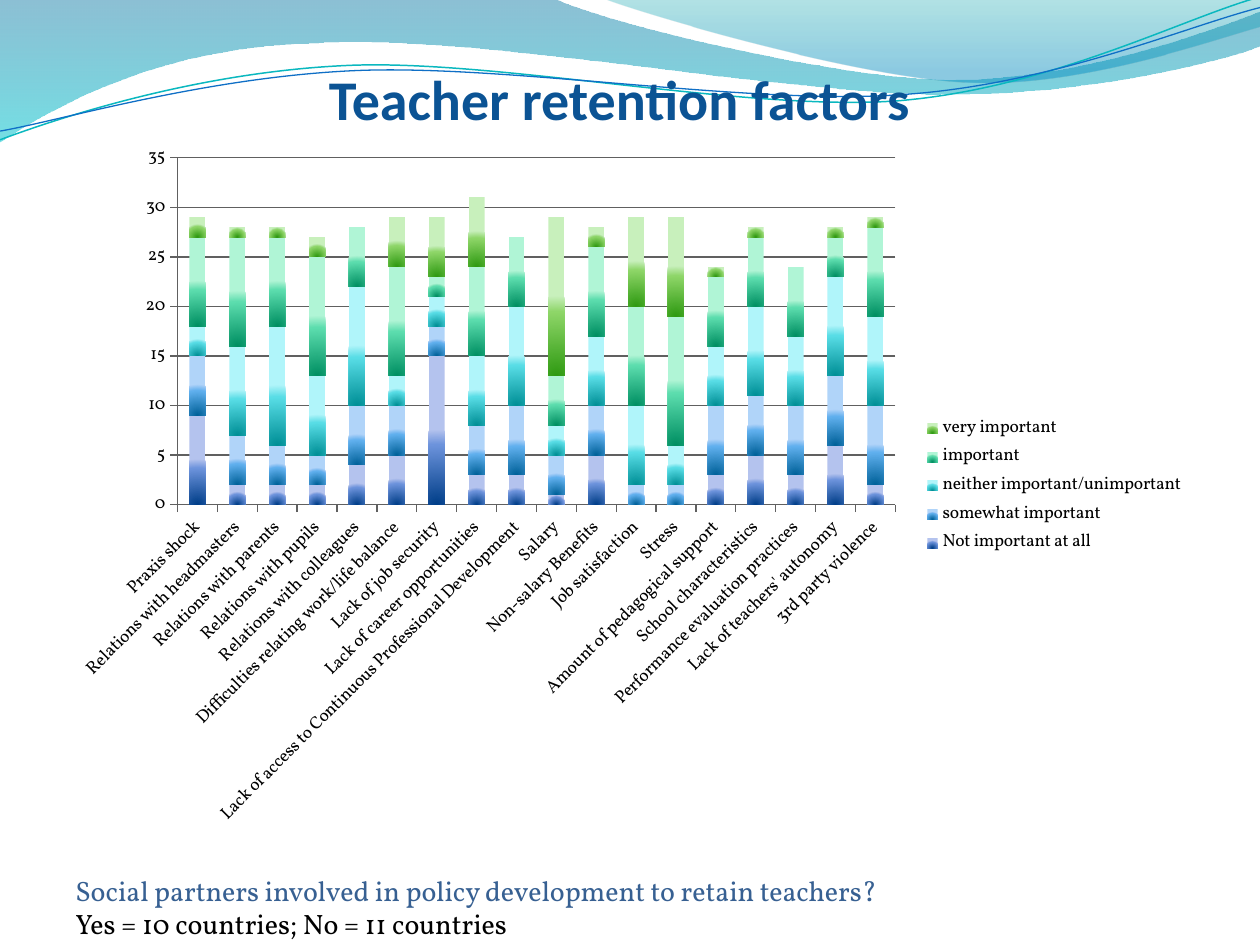
from lxml import etree
from pptx import Presentation
from pptx.chart.data import CategoryChartData
from pptx.dml.color import RGBColor
from pptx.enum.chart import XL_CHART_TYPE, XL_LEGEND_POSITION, XL_TICK_MARK
from pptx.enum.text import MSO_ANCHOR
from pptx.oxml import parse_xml
from pptx.oxml.ns import nsdecls, qn
from pptx.util import Pt

COLORS = {
    "title": "0B5394", "question": "376092", "text": "000000", "grid": "606060",
    "teal line": "0AB8BF", "blue line": "0F6FC6",
}
DOWN = '<a:lin ang="5400000" scaled="0"/>'
FROM_BOTTOM = '<a:path path="circle"><a:fillToRect l="50000" t="100000" r="50000" b="0"/></a:path>'


def add_text(slide, box, lines, size, font, bold=False,
             anchor=MSO_ANCHOR.TOP, insets=(7.2, 3.6, 7.2, 3.6)):
    tf = slide.shapes.add_textbox(*[Pt(v) for v in box]).text_frame
    tf.word_wrap = True
    tf.vertical_anchor = anchor
    tf.margin_left, tf.margin_top, tf.margin_right, tf.margin_bottom = [Pt(v) for v in insets]
    for i, (text, color) in enumerate(lines):
        p = tf.paragraphs[0] if i == 0 else tf.add_paragraph()
        r = p.add_run()
        r.text = text
        r.font.size, r.font.name, r.font.bold = Pt(size), font, bold
        r.font.color.rgb = RGBColor.from_string(COLORS[color])


def set_gradient(item, fill, stops, direction):
    """Fill with stops of (position %, colour, opacity %)."""
    fill.background()
    gs = "".join(
        f'<a:gs pos="{pos * 1000}"><a:srgbClr val="{color}">'
        f'<a:alpha val="{alpha * 1000}"/></a:srgbClr></a:gs>'
        for pos, color, alpha in stops)
    grad = parse_xml(f'<a:gradFill {nsdecls("a")} rotWithShape="1"><a:gsLst>{gs}</a:gsLst>'
                     f'{direction}</a:gradFill>')
    no_fill = item._element.find(".//" + qn("a:noFill"))
    no_fill.getparent().replace(no_fill, grad)


prs = Presentation()
prs.slide_width, prs.slide_height = Pt(720), Pt(540)
s = prs.slides.add_slide(prs.slide_layouts[6])

# Waves at the top: 2 numbers are a straight segment, 6 are a Bezier curve
waves = [
    ([(0, 0), (316.8, -0.7), (342.7, 12.2, 478.1, 45.4, 545.8, 45.4),
      (614.2, 45.4, 689.8, 18.7, 720, 6.5), (720.7, 25.9),
      (709.2, 31.7, 626.4, 54.7, 537.1, 54), (447.8, 54, 275, 20.2, 185, 24.5),
      (92.2, 25.9, 33.1, 59.8, -0.7, 81.4), (0, 0)],
     [(0, "0074A1", 45), (100, "00C6CF", 55)], None, 0),
    ([(344.9, -0.7), (366.5, 7.9, 491, 44.6, 553.7, 46.8),
      (616.3, 49.7, 691.9, 23, 720, 15.1), (720, 0), (344.9, -0.7)],
     [(0, "00A1A9", 30), (80, "008BBF", 45)], None, 0),
    ([(0, 79.9), (34.6, 67, 113.8, 41, 199.4, 37.4),
      (284.4, 33.8, 427, 64.1, 513.4, 57.6), (599.8, 50.4, 675.4, 10.8, 718.6, -1.4)],
     None, "teal line", 0.85),
    ([(0, 74.9), (33.8, 69.1, 118.1, 43.9, 203.8, 40.3),
      (290.2, 36.7, 429.8, 60.5, 516.2, 54), (601.9, 48.2, 677.5, 15.1, 720, 4.3)],
     None, "blue line", 0.75),
]
for segments, stops, line, width in waves:
    points = [(Pt(x), Pt(y)) for seg in segments for x, y in zip(seg[::2], seg[1::2])]
    builder = s.shapes.build_freeform(*points[0])
    builder.add_line_segments(points[1:], close=stops is not None)
    sp = builder.convert_to_shape()
    sp.shadow.inherit = False
    # Join the three points of each curve into one Bezier segment
    straight = iter(sp._element.findall(".//" + qn("a:lnTo")))
    for seg in segments[1:]:
        first = next(straight)
        if len(seg) == 6:
            first.tag = qn("a:cubicBezTo")
            for _ in range(2):
                other = next(straight)
                first.append(other[0])
                other.getparent().remove(other)
    if stops:
        set_gradient(sp, sp.fill, stops, DOWN)
        sp.line.fill.background()
    else:
        sp.fill.background()
        sp.line.color.rgb = RGBColor.from_string(COLORS[line])
        sp.line.width = Pt(width)

# Title
add_text(s, (36, 21.6, 648, 54), [("Teacher retention factors", "title")], 32, "Calibri",
         bold=True, anchor=MSO_ANCHOR.BOTTOM, insets=(152, 3.6, 0, 0.5))

# Chart data: name, values, (dark, middle, pale) of the bar gradient
series = [
    ("Not important at all", (9, 2, 2, 2, 4, 5, 15, 3, 3, 1, 5, 0, 0, 3, 5, 3, 6, 2),
     ("003E88", "6C93DC", "B4C3EE")),
    ("somewhat important", (6, 5, 4, 3, 6, 5, 3, 5, 7, 4, 5, 2, 2, 7, 6, 7, 7, 8),
     ("006199", "60B0EE", "B0D4F9")),
    ("neither important/unimportant", (3, 9, 12, 8, 12, 3, 3, 7, 10, 3, 7, 8, 4, 6, 9, 7, 10, 9),
     ("008F96", "58DDE6", "B0F5FA")),
    ("important", (9, 11, 9, 12, 6, 11, 2, 9, 7, 5, 9, 10, 13, 7, 7, 7, 4, 9),
     ("008F62", "5CDDAE", "B0F5D6")),
    ("very important", (2, 1, 1, 2, 0, 5, 6, 7, 0, 16, 2, 9, 10, 1, 1, 0, 1, 1),
     ("2F9A12", "8ED668", "C8F0BC")),
]
data = CategoryChartData()
data.categories = [
    "Praxis shock", "Relations with headmasters", "Relations with parents",
    "Relations with pupils", "Relations with colleagues",
    "Difficulties relating work/life balance", "Lack of job security",
    "Lack of career opportunities", "Lack of access to Continuous Professional Development",
    "Salary", "Non-salary Benefits", "Job satisfaction", "Stress",
    "Amount of pedagogical support", "School characteristics",
    "Performance evaluation practices", "Lack of teachers' autonomy", "3rd party violence"]
for name, values, _ in series:
    data.add_series(name, values)

# Stacked column chart
chart = s.shapes.add_chart(XL_CHART_TYPE.COLUMN_STACKED, Pt(36), Pt(75.6), Pt(648), Pt(404.6),
                           data).chart
chart.has_title = False
chart.font.size, chart.font.name = Pt(10), "Vollkorn"
chart.font.color.rgb = RGBColor.from_string(COLORS["text"])
plot = chart.plots[0]
plot.overlap, plot.gap_width, plot.vary_by_categories = 100, 150, False
for ser, (_, _, (dark, middle, pale)) in zip(plot.series, series):
    set_gradient(ser, ser.format.fill,
                 [(0, dark, 100), (80, middle, 100), (100, pale, 100)], FROM_BOTTOM)

# Axes
cat_axis, val_axis = chart.category_axis, chart.value_axis
val_axis.minimum_scale, val_axis.maximum_scale, val_axis.major_unit = 0, 35, 5
val_axis.has_major_gridlines = True
for axis in (cat_axis, val_axis):
    axis.major_tick_mark = XL_TICK_MARK.OUTSIDE
    axis.tick_labels.font.size = Pt(10)
for fmt in (cat_axis.format, val_axis.format, val_axis.major_gridlines.format):
    fmt.line.color.rgb = RGBColor.from_string(COLORS["grid"])
    fmt.line.width = Pt(0.75)
cat_axis._element.find(qn("c:txPr")).find(qn("a:bodyPr")).set("rot", "-2700000")

# Legend, then fixed places for the plot area and the legend
chart.has_legend = True
legend = chart.legend
legend.position, legend.include_in_layout = XL_LEGEND_POSITION.RIGHT, False
legend.font.size = Pt(10)
plot_area = chart._chartSpace.chart.plotArea
for parent, index, inner, frame in (
        (plot_area, 0, True, (0.101, 0.036, 0.633, 0.49)),
        (legend._element, 1, False, (0.759, 0.394, 0.23, 0.21))):
    for old in parent.findall(qn("c:layout")):
        parent.remove(old)
    layout = etree.Element(qn("c:layout"))
    manual = etree.SubElement(layout, qn("c:manualLayout"))
    if inner:
        etree.SubElement(manual, qn("c:layoutTarget"), val="inner")
    for tag in ("xMode", "yMode"):
        etree.SubElement(manual, qn("c:" + tag), val="edge")
    for tag, value in zip("xywh", frame):
        etree.SubElement(manual, qn("c:" + tag), val=str(value))
    parent.insert(index, layout)

# Question and answer under the chart
add_text(s, (36, 457.2, 585.4, 104.4),
         [("Social partners involved in policy development to retain teachers?", "question"),
          ("Yes = 10 countries; No = 11 countries", "text")],
         16, "Vollkorn", insets=(7.2, 41.7, 7.2, 3.6))

prs.save("out.pptx")
